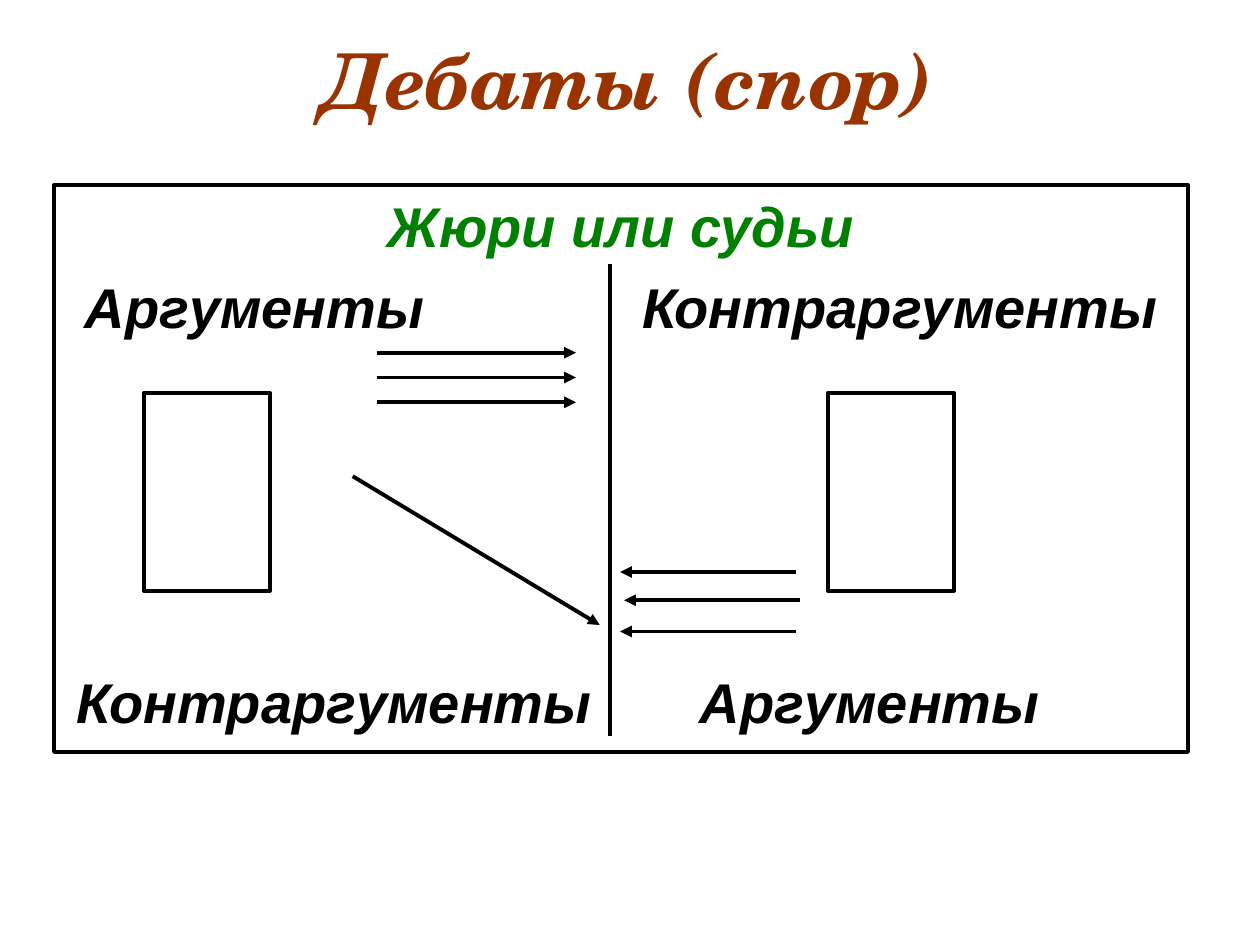
from dataclasses import dataclass

from lxml.etree import SubElement
from pptx import Presentation
from pptx.dml.color import RGBColor
from pptx.enum.shapes import MSO_CONNECTOR, MSO_SHAPE
from pptx.enum.text import MSO_ANCHOR, PP_ALIGN
from pptx.oxml.ns import qn
from pptx.util import Cm, Pt

BLACK = RGBColor(0x00, 0x00, 0x00)
WHITE = RGBColor(0xFF, 0xFF, 0xFF)
GREEN = RGBColor(0x00, 0x80, 0x00)
BROWN = RGBColor(0x99, 0x33, 0x00)
LINE_WIDTH = Pt(2.25)


@dataclass
class Box:
    left: float
    top: float
    width: float
    height: float

    def lengths(self) -> tuple:
        return Cm(self.left), Cm(self.top), Cm(self.width), Cm(self.height)


@dataclass
class Line:
    x1: float
    y1: float
    x2: float
    y2: float
    arrow: bool = True


@dataclass
class Label:
    text: str
    color: RGBColor = BLACK
    size: float = 32
    font: str = "Arial"
    align: PP_ALIGN = PP_ALIGN.LEFT
    before: float = 0
    tabs: tuple[float, ...] = ()


TITLE_BOX = Box(0.69, 0.53, 24, 2.11)
FRAME = Box(1.09, 3.73, 22.86, 11.43)
BOTTOM_BOX = Box(1.3, 13.34, 22.81, 1.6)
SEATS = [Box(left, 7.92, 2.54, 3.99) for left in (16.69, 2.9)]

TITLE = Label("Дебаты (спор)", BROWN, 44, "TeX Gyre Schola", PP_ALIGN.CENTER)
FRAME_LABELS = [
    Label("Жюри или судьи", GREEN, align=PP_ALIGN.CENTER, before=8),
    Label("\tАргументы\tКонтраргументы", before=8, tabs=(0.37, 11.61)),
]
BOTTOM_LABEL = Label("Контраргументы\tАргументы", tabs=(12.56,))

LINES = [
    Line(12.29, 5.33, 12.29, 14.83, arrow=False),
    *(Line(7.59, 7.11 + 0.5 * i, 11.61, 7.11 + 0.5 * i) for i in range(3)),
    Line(7.11, 9.6, 12.09, 12.6),
    *(Line(x + 3.55, y, x, y) for x, y in ((12.5, 11.53), (12.58, 12.1), (12.5, 12.73))),
]


def write(s, labels: list[Label]) -> None:
    tf = s.text_frame
    tf.word_wrap = True
    tf.vertical_anchor = MSO_ANCHOR.TOP
    tf.margin_left = tf.margin_right = Cm(0.25)
    for i, label in enumerate(labels):
        p = tf.add_paragraph() if i else tf.paragraphs[0]
        p.alignment = label.align
        p.space_before = Pt(label.before)
        if label.tabs:
            stops = SubElement(p._p.get_or_add_pPr(), qn("a:tabLst"))
            for tab in label.tabs:
                SubElement(stops, qn("a:tab"), pos=str(Cm(tab)), algn="l")
        p.font.name = label.font
        p.font.size = Pt(label.size)
        p.font.bold = p.font.italic = True
        p.font.color.rgb = label.color
        p.add_run().text = label.text


def add_text(sp, box: Box, label: Label) -> None:
    write(sp.add_textbox(*box.lengths()), [label])


def add_rect(sp, box: Box, filled: bool):
    s = sp.add_shape(MSO_SHAPE.RECTANGLE, *box.lengths())
    s.shadow.inherit = False
    if filled:
        s.fill.solid()
        s.fill.fore_color.rgb = WHITE
    else:
        s.fill.background()
    s.line.color.rgb = BLACK
    s.line.width = LINE_WIDTH
    return s


def add_line(sp, line: Line) -> None:
    s = sp.add_connector(
        MSO_CONNECTOR.STRAIGHT, Cm(line.x1), Cm(line.y1), Cm(line.x2), Cm(line.y2)
    )
    s.line.color.rgb = BLACK
    s.line.width = LINE_WIDTH
    if line.arrow:
        SubElement(s.line._get_or_add_ln(), qn("a:tailEnd"), type="triangle")
    SubElement(s._element.spPr, qn("a:effectLst"))


def main() -> None:
    """Build the debate layout slide and save it."""
    prs = Presentation()
    prs.slide_width, prs.slide_height = Cm(25.4), Cm(19.05)
    sp = prs.slides.add_slide(prs.slide_layouts[6]).shapes
    add_text(sp, TITLE_BOX, TITLE)
    write(add_rect(sp, FRAME, filled=False), FRAME_LABELS)
    for seat in SEATS:
        add_rect(sp, seat, filled=True)
    for line in LINES:
        add_line(sp, line)
    add_text(sp, BOTTOM_BOX, BOTTOM_LABEL)
    prs.save("out.pptx")


if __name__ == "__main__":
    main()
